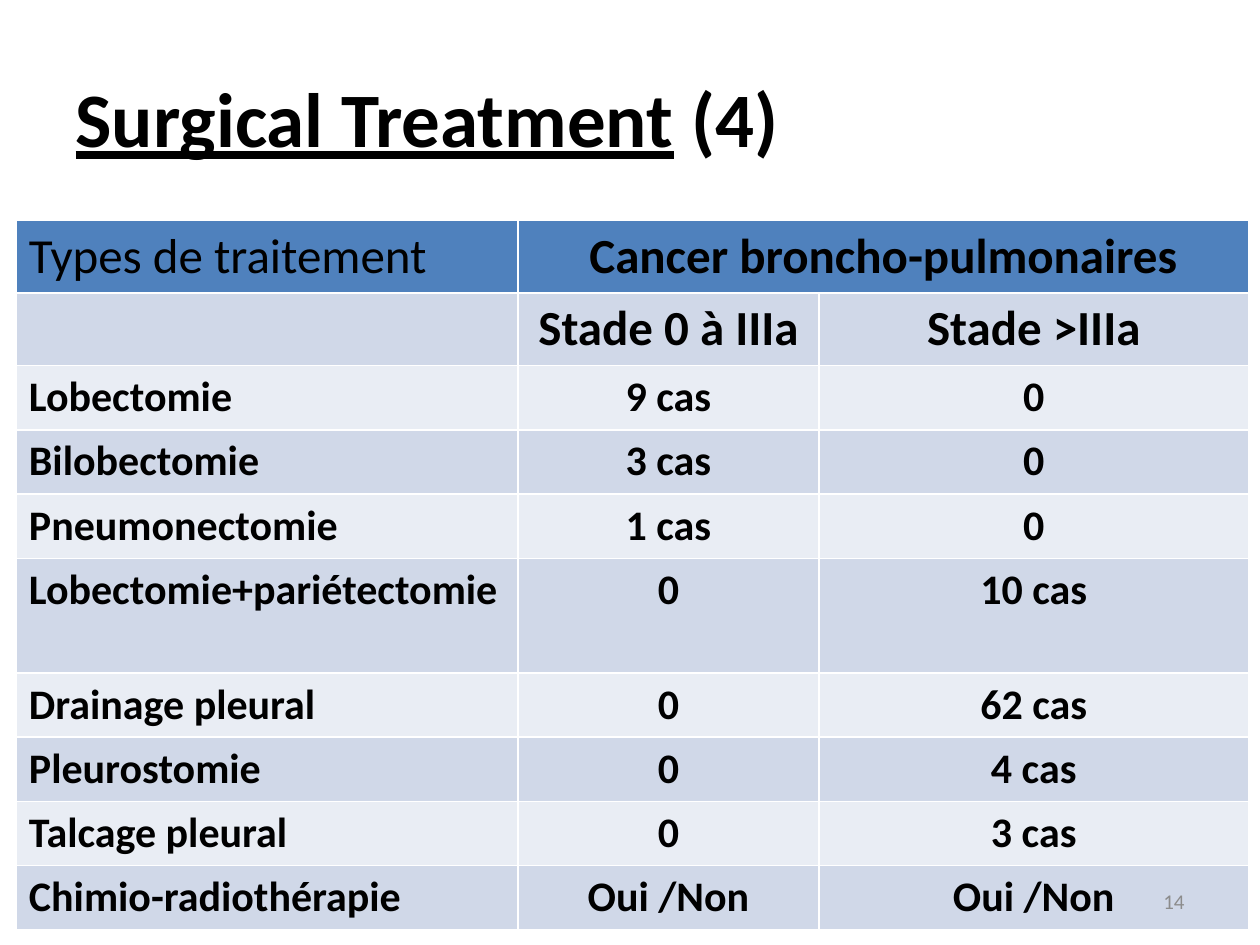
from pptx import Presentation
from pptx import util as u
from pptx.dml import color
from pptx.enum import text

LEFT, MID, RIGHT = text.PP_ALIGN.LEFT, text.PP_ALIGN.CENTER, text.PP_ALIGN.RIGHT


def paint(form, shade):
    form.rgb = color.RGBColor.from_string(shade)


def write(frame, words, size=24, bold=True, line=False, shade="000000", align=LEFT):
    par = frame.paragraphs[0]
    par.alignment = align
    run = par.add_run()
    run.text = words
    run.font.name = "Calibri"
    run.font.size = u.Pt(size)
    run.font.bold = bold
    run.font.underline = line
    paint(run.font.color, shade)


deck = Presentation()
deck.slide_width, deck.slide_height = u.Inches(10), u.Inches(7.5)
slide = deck.slides.add_slide(deck.slide_layouts[5])

title = slide.shapes.title
title.left, title.top = u.Inches(0.5), u.Inches(0.3)
title.width, title.height = u.Inches(9), u.Inches(1.25)
title.text_frame.vertical_anchor = text.MSO_ANCHOR.MIDDLE
write(title.text_frame, "Surgical Treatment", size=44, line=True)
write(title.text_frame, " ", size=44, bold=False)
write(title.text_frame, "(4)", size=44)

rows = [
    ("Types de traitement", "Cancer broncho-pulmonaires", ""),
    ("", "Stade 0 à IIIa", "Stade >IIIa"),
    ("Lobectomie", "9 cas", "0"),
    ("Bilobectomie", "3 cas", "0"),
    ("Pneumonectomie", "1 cas", "0"),
    ("Lobectomie+pariétectomie", "0", "10 cas"),
    ("Drainage pleural", "0", "62 cas"),
    ("Pleurostomie", "0", "4 cas"),
    ("Talcage pleural", "0", "3 cas"),
    ("Chimio-radiothérapie", "Oui /Non", "Oui /Non"),
]
wide = [3.98, 2.39, 3.41]
high = [0.57] * 2 + [0.51] * 3 + [0.91] + [0.51] * 4
grid = slide.shapes.add_table(
    len(rows), len(wide), u.Inches(0.13), u.Inches(1.75),
    u.Inches(sum(wide)), u.Inches(sum(high))).table
for col, width in zip(grid.columns, wide):
    col.width = u.Inches(width)
for row, height in zip(grid.rows, high):
    row.height = u.Inches(height)
grid.cell(0, 1).merge(grid.cell(0, 2))

for r, row in enumerate(rows):
    fill = "4F81BD" if r == 0 else "D0D8E8" if r % 2 else "E9EDF4"
    for c, words in enumerate(row):
        cell = grid.cell(r, c)
        cell.fill.solid()
        paint(cell.fill.fore_color, fill)
        if words:
            write(cell.text_frame, words, size=28 if r < 2 else 24,
                  bold=(r, c) != (0, 0), align=MID if c else LEFT)

page = slide.shapes.add_textbox(
    u.Inches(7.17), u.Inches(6.95), u.Inches(2.33), u.Inches(0.4)).text_frame
page.word_wrap = True
page.vertical_anchor = text.MSO_ANCHOR.MIDDLE
write(page, "14", size=12, bold=False, shade="8C8C8C", align=RIGHT)

deck.save("out.pptx")
